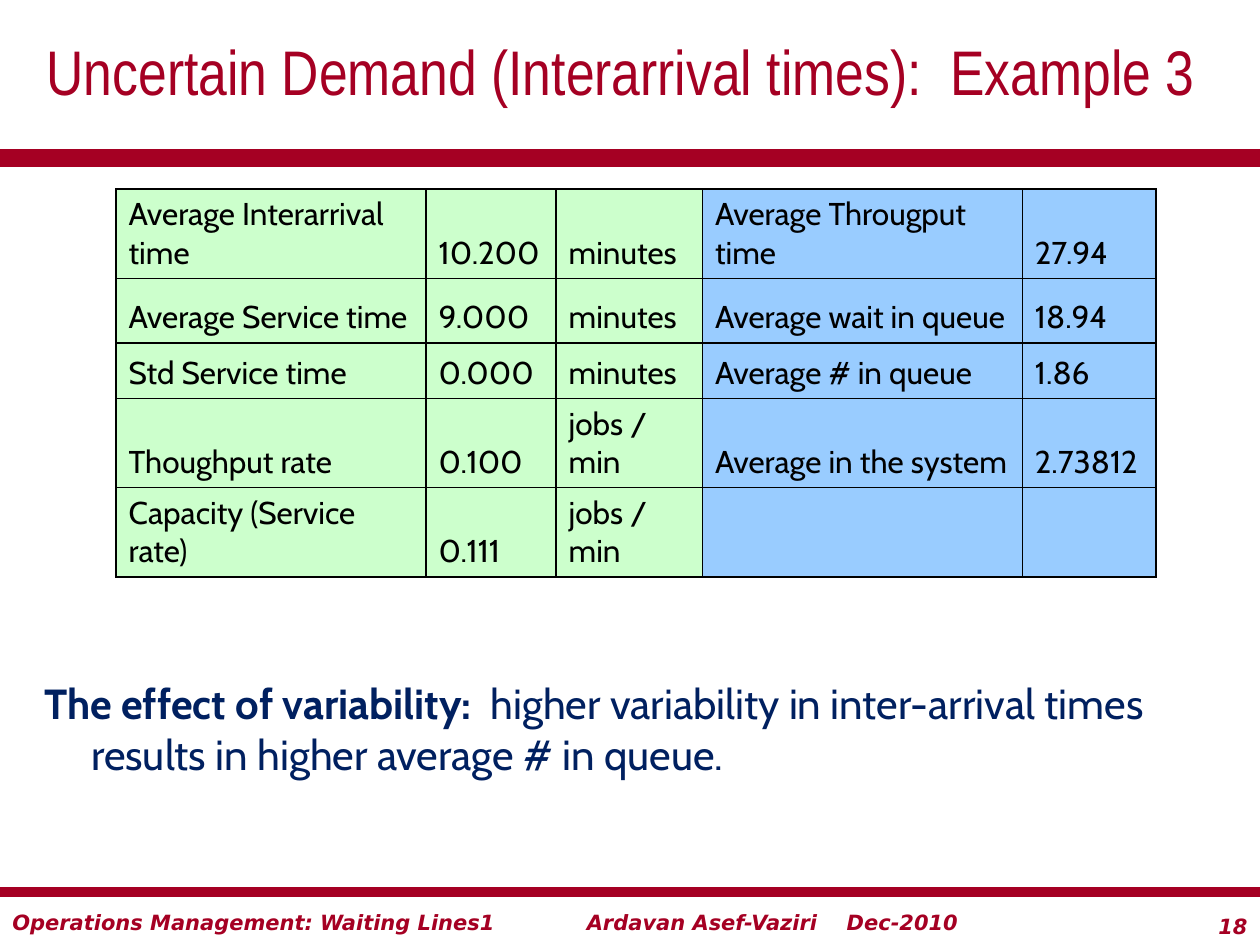
from lxml import etree
from pptx import Presentation
from pptx.dml.color import RGBColor
from pptx.enum.shapes import MSO_CONNECTOR
from pptx.enum.text import MSO_ANCHOR, PP_ALIGN
from pptx.oxml.ns import qn
from pptx.util import Cm, Pt

STRAIGHT = MSO_CONNECTOR.STRAIGHT
TOP, MIDDLE, BOTTOM = MSO_ANCHOR.TOP, MSO_ANCHOR.MIDDLE, MSO_ANCHOR.BOTTOM
LEFT, RIGHT = PP_ALIGN.LEFT, PP_ALIGN.RIGHT

COLORS = {
    "crimson": "A50023", "navy": "002060", "black": "000000",
    "input": "CCFFCC", "result": "99CCFF",
}
SLIDE_WIDTH, SLIDE_HEIGHT = 25.4, 19.05

TITLE = "Uncertain Demand (Interarrival times):  Example 3"
TITLE_BOX = (0.69, 0, 24.71, 2.82)

CONCLUSION = (
    "The effect of variability:  ",
    "higher variability in inter-arrival times results in higher average # in queue.",
)
CONCLUSION_BOX = (0.64, 13.54, 24.76, 2.97)
HANGING_INDENT = 0.95

# text, box, alignment
FOOTERS = [
    ("Operations Management: Waiting Lines1", (0, 18.21, 11.86, 0.76), LEFT),
    ("Ardavan Asef-Vaziri\tDec-2010", (11.58, 18.21, 8.51, 0.76), LEFT),
    ("18", (23.5, 18.29, 1.9, 0.76), RIGHT),
]
DATE_TAB = 5.24

RULES = [(3.18, 10), (17.98, 6)]  # height on the slide, line width

TABLE_LEFT, TABLE_TOP = 2.34, 3.81
COLUMN_WIDTHS = [6.25, 2.62, 2.95, 6.45, 2.69]
ROW_HEIGHTS = [1.8, 1.3, 1.12, 1.8, 1.8]
INPUT_COLUMNS = 3
QUEUE_FIGURES = [
    ("Average Interarrival time", "10.200", "minutes", "Average Througput time", "27.94"),
    ("Average Service time", "9.000", "minutes", "Average wait in queue", "18.94"),
    ("Std Service time", "0.000", "minutes", "Average # in queue", "1.86"),
    ("Thoughput rate", "0.100", "jobs / min", "Average in the system", "2.73812"),
    ("Capacity (Service rate)", "0.111", "jobs / min", "", ""),
]


def rgb(name):
    return RGBColor.from_string(COLORS[name])


def style_run(run, font_name, size, color, bold=False, italic=False):
    run.font.name = font_name
    run.font.size = Pt(size)
    run.font.bold = bold
    run.font.italic = italic
    run.font.color.rgb = rgb(color)


def add_text(slide, box, parts, anchor=TOP, alignment=LEFT):
    """Add a one-paragraph text box; each part is a text with its run style."""
    text_frame = slide.shapes.add_textbox(*map(Cm, box)).text_frame
    text_frame.word_wrap = True
    text_frame.vertical_anchor = anchor
    paragraph = text_frame.paragraphs[0]
    paragraph.alignment = alignment
    for text, style in parts:
        run = paragraph.add_run()
        run.text = text
        style_run(run, *style)
    return paragraph


def add_rule(slide, height, width):
    line = slide.shapes.add_connector(
        STRAIGHT, 0, Cm(height), Cm(SLIDE_WIDTH), Cm(height))
    line.line.color.rgb = rgb("crimson")
    line.line.width = Pt(width)
    etree.SubElement(line._element.spPr, qn("a:effectLst"))


def add_borders(cell):
    properties = cell._tc.get_or_add_tcPr()
    for side in ("lnL", "lnR", "lnT", "lnB"):
        border = etree.SubElement(properties, qn(f"a:{side}"), w=str(Pt(1)))
        fill = etree.SubElement(border, qn("a:solidFill"))
        etree.SubElement(fill, qn("a:srgbClr"), val=COLORS["black"])


def add_queue_table(slide):
    table = slide.shapes.add_table(
        len(ROW_HEIGHTS), len(COLUMN_WIDTHS), Cm(TABLE_LEFT), Cm(TABLE_TOP),
        Cm(sum(COLUMN_WIDTHS)), Cm(sum(ROW_HEIGHTS))).table
    table.first_row = table.horz_banding = False
    for column, width in zip(table.columns, COLUMN_WIDTHS):
        column.width = Cm(width)
    for row, height, texts in zip(table.rows, ROW_HEIGHTS, QUEUE_FIGURES):
        row.height = Cm(height)
        for index, (cell, text) in enumerate(zip(row.cells, texts)):
            add_borders(cell)
            cell.fill.solid()
            cell.fill.fore_color.rgb = rgb("input" if index < INPUT_COLUMNS else "result")
            cell.vertical_anchor = BOTTOM
            cell.text_frame.text = text
            for run in cell.text_frame.paragraphs[0].runs:
                style_run(run, "Cabin", 18, "black")


def add_conclusion(slide):
    lead, statement = CONCLUSION
    paragraph = add_text(slide, CONCLUSION_BOX, [
        (lead, ("Cabin", 24, "navy", True)),
        (statement, ("Cabin", 24, "navy")),
    ])
    paragraph.space_before = Pt(4.8)
    properties = paragraph._p.get_or_add_pPr()
    properties.set("marL", str(Cm(HANGING_INDENT)))
    properties.set("indent", str(-Cm(HANGING_INDENT)))


def add_footer(slide, text, box, alignment):
    style = ("DejaVu Sans", 12, "crimson", True, True)
    paragraph = add_text(slide, box, [(text, style)], alignment=alignment)
    if "\t" in text:
        tabs = etree.SubElement(paragraph._p.get_or_add_pPr(), qn("a:tabLst"))
        etree.SubElement(tabs, qn("a:tab"), pos=str(Cm(DATE_TAB)), algn="l")


def main():
    presentation = Presentation()
    presentation.slide_width = Cm(SLIDE_WIDTH)
    presentation.slide_height = Cm(SLIDE_HEIGHT)
    slide = presentation.slides.add_slide(presentation.slide_layouts[6])
    for footer in FOOTERS:
        add_footer(slide, *footer)
    for rule in RULES:
        add_rule(slide, *rule)
    add_conclusion(slide)
    add_text(slide, TITLE_BOX, [(TITLE, ("Arial Narrow", 36, "crimson"))], anchor=MIDDLE)
    add_queue_table(slide)
    presentation.save("out.pptx")


if __name__ == "__main__":
    main()
